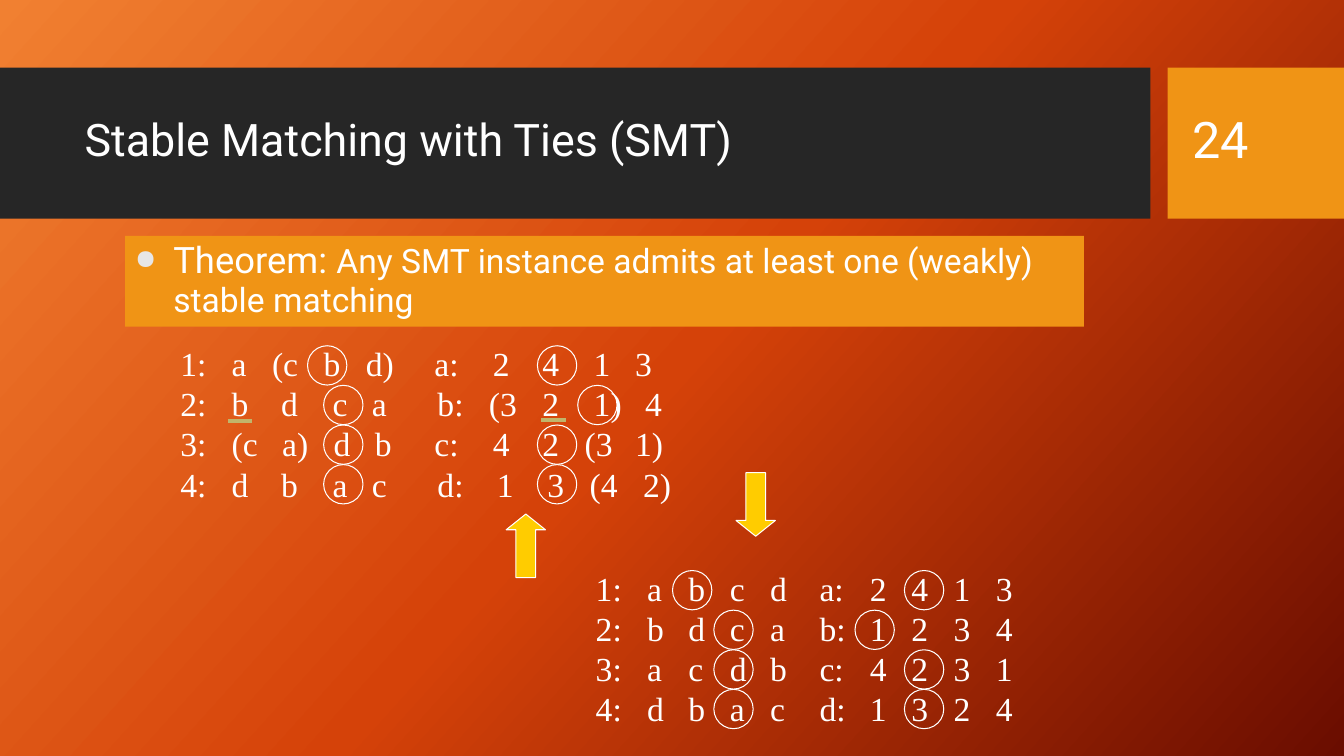
from copy import deepcopy

from lxml.etree import SubElement
from pptx import Presentation
from pptx.dml.color import RGBColor
from pptx.enum.shapes import MSO_CONNECTOR, MSO_SHAPE
from pptx.enum.text import MSO_ANCHOR, PP_ALIGN
from pptx.oxml.ns import qn
from pptx.util import Inches, Pt

WHITE, ORANGE, DARK = "FFFFFF", "F09415", "262626"
YELLOW, OLIVE, BULLET = "FFCC00", "C1B56B", "E7E6E6"
RING, ROW_STEP = 0.39, 0.393

TIED_ROWS = [
    ("1: a (c b d) a: 2 4 1 3", [0.51, 0.91, 1.42, 1.84, 2.52, 3.1, 3.59, 4.1, 4.51]),
    ("2: b d c a b: (3 2 1) 4", [0.51, 1, 1.51, 1.9, 2.55, 3.06, 3.59, 4.1, 4.61]),
    ("3: (c a) d b c: 4 2 (3 1)", [0.51, 1.01, 1.52, 1.93, 2.52, 3.1, 3.59, 4.01, 4.51]),
    ("4: d b a c d: 1 3 (4 2)", [0.51, 1, 1.51, 1.9, 2.55, 3.14, 3.64, 4.06, 4.59]),
]
STRICT_STOPS = [0.51, 0.92, 1.33, 1.73, 2.22, 2.72, 3.13, 3.55, 3.97]
STRICT_ROWS = [(row, STRICT_STOPS) for row in (
    "1: a b c d a: 2 4 1 3",
    "2: b d c a b: 1 2 3 4",
    "3: a c d b c: 4 2 3 1",
    "4: d b a c d: 1 3 2 4",
)]


def color(value):
    return RGBColor.from_string(value)


def style(r, size, font="Roboto"):
    r.font.size = Pt(size)
    r.font.name = font
    r.font.color.rgb = color(WHITE)


def add_shape(s, kind, x, y, w, h, fill=None, line=None):
    sp = s.shapes.add_shape(kind, Inches(x), Inches(y), Inches(w), Inches(h))
    sp.shadow.inherit = False
    if fill:
        sp.fill.solid()
        sp.fill.fore_color.rgb = color(fill)
    else:
        sp.fill.background()
    if line:
        sp.line.color.rgb = color(line)
        sp.line.width = Pt(0.75)
    else:
        sp.line.fill.background()
    return sp


def add_text(s, x, y, w, h, anchor=MSO_ANCHOR.TOP):
    tf = s.shapes.add_textbox(Inches(x), Inches(y), Inches(w), Inches(h)).text_frame
    tf.word_wrap = True
    tf.vertical_anchor = anchor
    return tf


def add_background(s):
    fill = s.background.fill
    fill.gradient()
    fill.gradient_angle = 318
    first = fill.gradient_stops[0]._gs
    first.addnext(deepcopy(first))
    stops = zip(fill.gradient_stops, (0, 0.5, 1), ("F18031", "D54209", "6A0D00"))
    for stop, position, value in stops:
        stop.position = position
        stop.color.rgb = color(value)


def add_header(s, y, h):
    add_shape(s, MSO_SHAPE.RECTANGLE, 0, y, 11.41, h, DARK)
    add_shape(s, MSO_SHAPE.RECTANGLE, 11.58, y, 1.75, h, ORANGE)
    labels = (("Stable Matching with Ties (SMT)", 0.74, 10.51, 32), ("24", 11.73, 1.26, 36))
    for text, x, w, size in labels:
        tf = add_text(s, x, y + 0.15, w, 1.18, MSO_ANCHOR.MIDDLE)
        tf.text = text
        style(tf.paragraphs[0].runs[0], size)
        tf.paragraphs[0].line_spacing = 0.9


def add_theorem(s, x, y, w, h):
    tf = add_shape(s, MSO_SHAPE.RECTANGLE, x, y, w, h, ORANGE).text_frame
    tf.word_wrap = True
    tf.vertical_anchor = MSO_ANCHOR.TOP
    p = tf.paragraphs[0]
    p.alignment = PP_ALIGN.LEFT
    p.line_spacing = 0.95
    pPr = p._p.get_or_add_pPr()
    pPr.set("marL", str(Inches(0.38)))
    pPr.set("indent", str(-Inches(0.38)))
    SubElement(SubElement(pPr, qn("a:buClr")), qn("a:srgbClr"), val=BULLET)
    SubElement(pPr, qn("a:buSzPct"), val="75000")
    SubElement(pPr, qn("a:buChar"), char="●")
    statement = "Any SMT instance admits at least one (weakly) stable matching"
    for text, size in (("Theorem: ", 26), (statement, 24)):
        r = p.add_run()
        r.text = text
        style(r, size)


def add_preferences(s, x, y, w, h, rows, left_rings, right_rings):
    tf = add_text(s, x, y, w, h)
    for i, (row, stops) in enumerate(rows):
        p = tf.paragraphs[0] if i == 0 else tf.add_paragraph()
        p.text = "\t".join(row.split())
        tabs = SubElement(p._p.get_or_add_pPr(), qn("a:tabLst"))
        for stop in stops:
            SubElement(tabs, qn("a:tab"), pos=str(Inches(stop)), algn="l")
        style(p.runs[0], 24, "Times New Roman")
    for rings in (left_rings, right_rings):
        for i, dx in enumerate(rings):
            add_shape(s, MSO_SHAPE.OVAL, x + dx, y + 0.08 + i * ROW_STEP,
                      RING, RING, line=WHITE)


def add_underline(s, x, y, w):
    line = s.shapes.add_connector(MSO_CONNECTOR.STRAIGHT, Inches(x), Inches(y),
                                  Inches(x + w), Inches(y))
    line.line.color.rgb = color(OLIVE)
    line.line.width = Pt(3)
    SubElement(line._element.spPr, qn("a:effectLst"))


def add_arrow(s, kind, x, y):
    sp = add_shape(s, kind, x, y, 0.39, 0.63, YELLOW, WHITE)
    sp.adjustments[0] = 0.5
    sp.adjustments[1] = 0.4


def main():
    prs = Presentation()
    prs.slide_width = Inches(13.33)
    prs.slide_height = Inches(7.5)
    s = prs.slides.add_slide(prs.slide_layouts[6])
    add_background(s)
    add_header(s, 0.67, 1.5)
    add_theorem(s, 1.24, 2.34, 9.51, 0.9)
    add_preferences(s, 1.69, 3.35, 5.32, 1.72, TIED_ROWS,
                    (1.36, 1.52, 1.52, 1.52), (3.64, 4.04, 3.64, 3.64))
    add_preferences(s, 5.81, 5.58, 4.71, 1.72, STRICT_ROWS,
                    (0.86, 1.27, 1.27, 1.27), (3.16, 2.67, 3.16, 3.16))
    add_underline(s, 2.26, 4.18, 0.24)
    add_underline(s, 5.37, 4.17, 0.24)
    add_arrow(s, MSO_SHAPE.DOWN_ARROW, 7.3, 4.69)
    add_arrow(s, MSO_SHAPE.UP_ARROW, 5.02, 5.1)
    prs.save("out.pptx")


if __name__ == "__main__":
    main()
